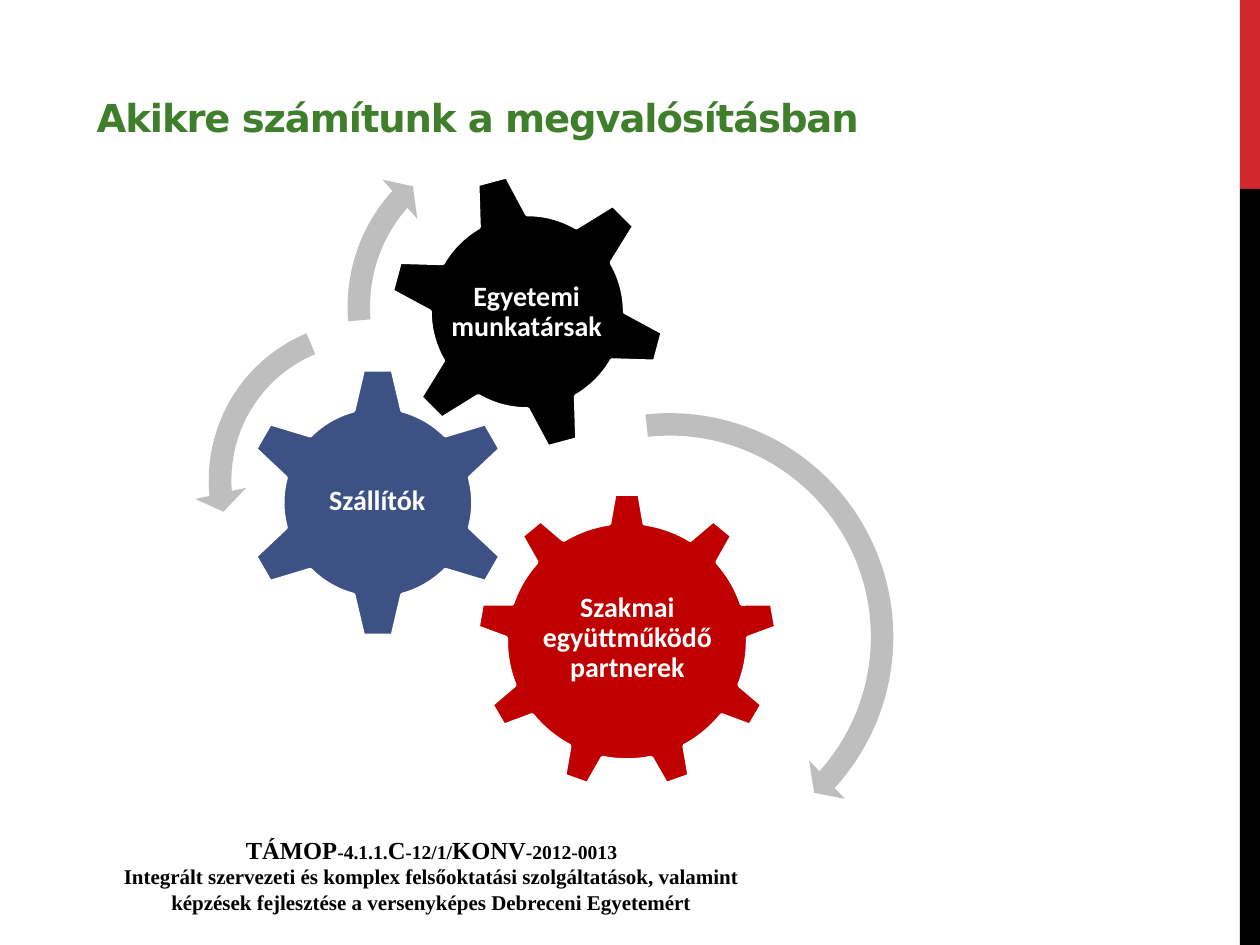
from dataclasses import dataclass
from typing import Any, NamedTuple

from pptx import Presentation
from pptx.dml.color import RGBColor as Color
from pptx.enum.shapes import MSO_SHAPE as Preset
from pptx.enum.text import MSO_ANCHOR as Anchor, PP_ALIGN as Align
from pptx.util import Pt


@dataclass(frozen=True)
class Theme:
    white: str = "FFFFFF"
    black: str = "000000"
    accent: str = "D1282E"
    title: str = "3F7E2A"
    partners: str = "C00000"
    suppliers: str = "3D5185"
    arrow: str = "BEBEBE"
    title_font: str = "DejaVu Sans"
    gear_font: str = "Calibri"
    footer_font: str = "Times New Roman"
    title_size: float = 22
    gear_size: float = 16
    code_size: float = 14
    footer_size: float = 12
    outline: float = 2.25


class Box(NamedTuple):
    left: float
    top: float
    width: float
    height: float


class Gear(NamedTuple):
    text: str
    preset: Any
    box: Box
    label_box: Box
    color: str
    rotation: float = 0


class Arrow(NamedTuple):
    preset: Any
    box: Box
    adjustments: tuple[float, ...]


THEME = Theme()

BARS = [
    (Box(708.5, 0, 11.5, 108), THEME.accent),
    (Box(708.5, 108, 11.5, 432), THEME.black),
]
GEARS = [
    Gear("Szakmai együttműködő partnerek", Preset.GEAR_9,
         Box(272.2, 281.5, 172.1, 169.9), Box(306.7, 321.1, 103.7, 87.1), THEME.partners),
    Gear("Szállítók", Preset.GEAR_6,
         Box(138.2, 209.5, 155.5, 155.5), Box(177.1, 248.4, 77, 76.3), THEME.suppliers),
    Gear("Egyetemi munkatársak", Preset.GEAR_6,
         Box(221.8, 98.6, 159.1, 159.1), Box(256.3, 133.9, 89.3, 89.3), THEME.black, 345),
]
ARROWS = [
    Arrow(Preset.CIRCULAR_ARROW, Box(246.2, 227.5, 272.9, 272.9),
          (0.047, 2.99, 25.313, 158.291, 0.055)),
    Arrow(Preset.LEFT_CIRCULAR_ARROW, Box(110.9, 175, 198.7, 198.7),
          (0.065, 4.3, 104.891, 148.378, 0.075)),
    Arrow(Preset.CIRCULAR_ARROW, Box(190.1, 68.4, 213.8, 213.8),
          (0.06, 3.941, 133.138, 105.082, 0.07)),
]


def apply_format(target: Any, values: dict[str, Any]) -> None:
    for name, value in values.items():
        setattr(target, name, value)


def points(box: Box) -> list[Pt]:
    return [Pt(length) for length in box]


def add_filled(slide: Any, preset: Any, box: Box, color: str) -> Any:
    shape = slide.shapes.add_shape(preset, *points(box))
    shape.shadow.inherit = False
    shape.fill.solid()
    shape.fill.fore_color.rgb = Color.from_string(color)
    shape.line.fill.background()
    return shape


def set_frame(shape: Any, anchor: Any, insets: tuple[float, float, float, float]) -> Any:
    frame = shape.text_frame
    sides = ("margin_left", "margin_top", "margin_right", "margin_bottom")
    values = {side: Pt(inset) for side, inset in zip(sides, insets)}
    apply_format(frame, {"word_wrap": True, "vertical_anchor": anchor, **values})
    return frame


def write(paragraph: Any, text: str, font: str, size: float, color: str,
          layout: dict[str, Any], extras: dict[str, str]) -> None:
    apply_format(paragraph, layout)
    run = paragraph.add_run()
    run.text = text
    apply_format(run.font, {"name": font, "size": Pt(size), "bold": True})
    run.font.color.rgb = Color.from_string(color)
    properties = run._r.get_or_add_rPr()
    for name, value in extras.items():
        properties.set(name, value)


def add_gear(slide: Any, gear: Gear) -> None:
    shape = add_filled(slide, gear.preset, gear.box, gear.color)
    shape.rotation = gear.rotation
    shape.line.color.rgb = Color.from_string(THEME.white)
    shape.line.width = Pt(THEME.outline)
    label = slide.shapes.add_textbox(*points(gear.label_box))
    frame = set_frame(label, Anchor.MIDDLE, (1.4, 1.4, 1.4, 1.4))
    write(frame.paragraphs[0], gear.text, THEME.gear_font, THEME.gear_size, THEME.white,
          {"alignment": Align.CENTER, "line_spacing": 0.9}, {})


def add_arrow(slide: Any, arrow: Arrow) -> None:
    shape = add_filled(slide, arrow.preset, arrow.box, THEME.arrow)
    for index, value in enumerate(arrow.adjustments):
        shape.adjustments[index] = value


def add_title(slide: Any) -> None:
    title = slide.shapes.add_textbox(*points(Box(48.2, 18, 499.7, 65.5)))
    frame = set_frame(title, Anchor.BOTTOM, (7.2, 3.6, 7.2, 3.6))
    write(frame.paragraphs[0], "Akikre számítunk a megvalósításban", THEME.title_font,
          THEME.title_size, THEME.title, {"alignment": Align.LEFT}, {"spc": "-60"})


def add_footer(slide: Any) -> None:
    footer = add_filled(slide, Preset.RECTANGLE, Box(48.2, 468.7, 396.7, 58.3), THEME.white)
    frame = set_frame(footer, Anchor.TOP, (7.2, 8.2, 7.2, 3.6))
    centered = {"alignment": Align.CENTER}
    write(frame.paragraphs[0], "TÁMOP-4.1.1.C-12/1/KONV-2012-0013", THEME.footer_font,
          THEME.code_size, THEME.black, centered, {"cap": "small"})
    write(frame.add_paragraph(),
          "Integrált szervezeti és komplex felsőoktatási szolgáltatások, valamint "
          "képzések fejlesztése a versenyképes Debreceni Egyetemért",
          THEME.footer_font, THEME.footer_size, THEME.black, centered, {})


def main() -> None:
    presentation = Presentation()
    apply_format(presentation, {"slide_width": Pt(720), "slide_height": Pt(540)})
    slide = presentation.slides.add_slide(presentation.slide_layouts[6])
    for box, color in BARS:
        add_filled(slide, Preset.RECTANGLE, box, color)
    add_footer(slide)
    add_title(slide)
    for gear in GEARS:
        add_gear(slide, gear)
    for arrow in ARROWS:
        add_arrow(slide, arrow)
    presentation.save("out.pptx")


if __name__ == "__main__":
    main()
